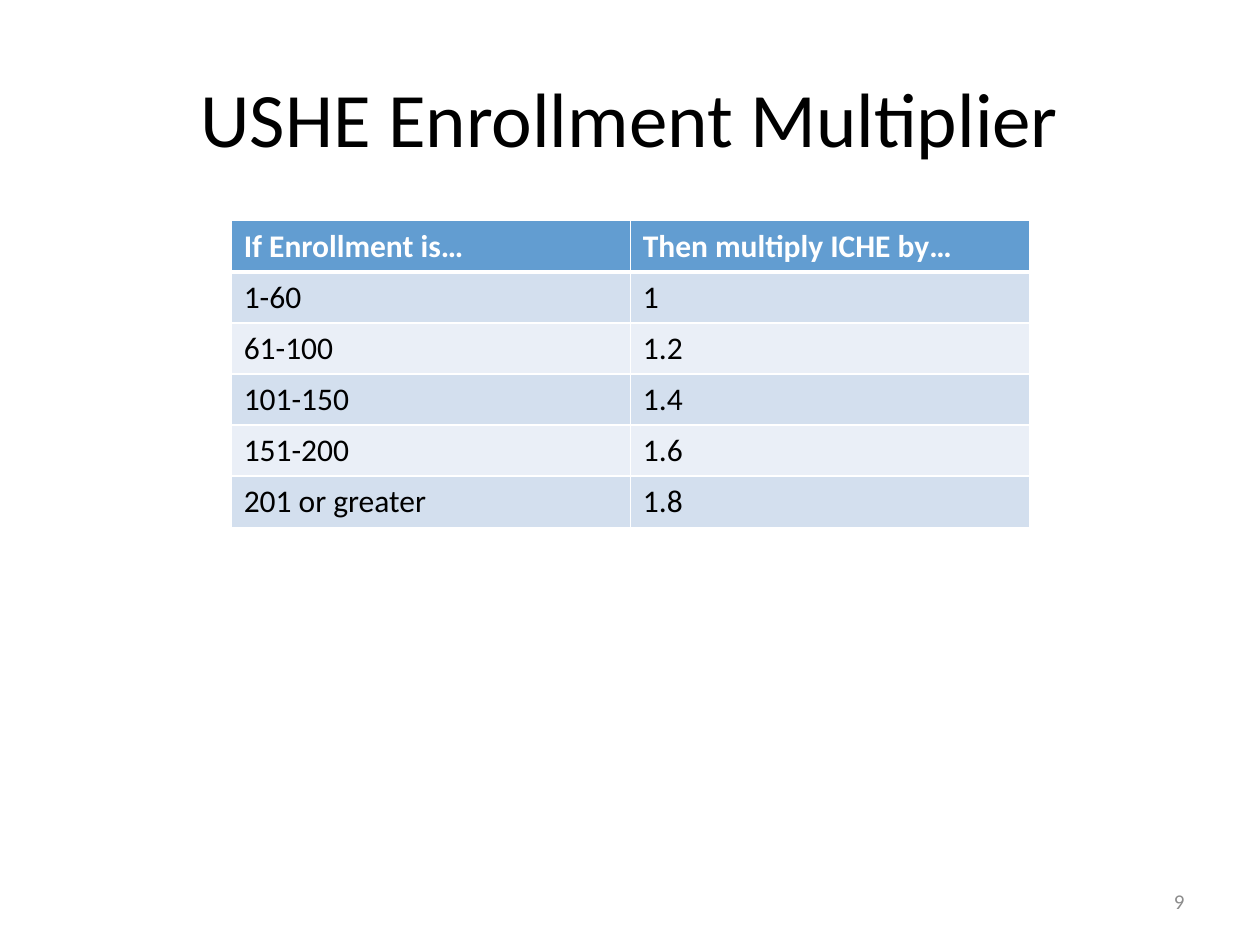
"""Build the enrollment multiplier slide with its lookup table."""
from typing import NamedTuple

from lxml.etree import SubElement
from pptx import Presentation
from pptx.dml.color import RGBColor as Rgb
from pptx.enum.text import MSO_ANCHOR as Anchor, PP_ALIGN as Align
from pptx.oxml.ns import qn
from pptx.util import Cm, Pt

FONT = "Calibri"
COLORS = {
    "text": "000000",
    "white": "FFFFFF",
    "header": "629DD1",
    "odd": "D3DFEE",
    "even": "EAEFF7",
    "number": "8C8C8C",
}


class Row(NamedTuple):
    enrollment: str
    multiplier: str


HEADER = Row("If Enrollment is…", "Then multiply ICHE by…")
ROWS = [
    Row("1-60", "1"),
    Row("61-100", "1.2"),
    Row("101-150", "1.4"),
    Row("151-200", "1.6"),
    Row("201 or greater", "1.8"),
]


def write(frame, text: str, *, size: float, color: str = "text",
          bold: bool = False, align=Align.LEFT) -> None:
    para = frame.paragraphs[0]
    para.alignment = align
    span = para.add_run()
    span.text = text
    span.font.name = FONT
    span.font.size = Pt(size)
    span.font.bold = bold
    span.font.color.rgb = Rgb.from_string(COLORS[color])


def add_borders(cell, widths: dict[str, float]) -> None:
    properties = cell._tc.get_or_add_tcPr()
    for side, width in widths.items():
        line = SubElement(properties, qn(f"a:ln{side}"), w=str(Pt(width)))
        fill = SubElement(line, qn("a:solidFill"))
        SubElement(fill, qn("a:srgbClr"), val=COLORS["white"])


def add_multiplier_table(page) -> None:
    rows = [HEADER, *ROWS]
    table = page.shapes.add_table(
        len(rows), len(HEADER), Cm(4.66), Cm(4.45), Cm(16.09), Cm(6.18)
    ).table
    for index, row in enumerate(rows):
        is_header = index == 0
        band = "header" if is_header else "odd" if index % 2 else "even"
        widths = {"L": 1, "R": 1, "T": 3 if index == 1 else 1,
                  "B": 3 if is_header else 1}
        for column, text in enumerate(row):
            cell = table.cell(index, column)
            add_borders(cell, widths)
            cell.fill.solid()
            cell.fill.fore_color.rgb = Rgb.from_string(COLORS[band])
            write(cell.text_frame, text, size=18, bold=is_header,
                  color="white" if is_header else "text")


def add_title(page, text: str) -> None:
    title = page.shapes.title
    title.left, title.top = Cm(1.27), Cm(0.76)
    title.width, title.height = Cm(22.86), Cm(3.18)
    title.text_frame.vertical_anchor = Anchor.MIDDLE
    write(title.text_frame, text, size=44, align=Align.CENTER)


def add_page_number(page, text: str) -> None:
    box = page.shapes.add_textbox(Cm(18.21), Cm(17.65), Cm(5.92), Cm(1.02))
    box.text_frame.word_wrap = True
    box.text_frame.vertical_anchor = Anchor.MIDDLE
    write(box.text_frame, text, size=12, color="number", align=Align.RIGHT)


def main() -> None:
    deck = Presentation()
    deck.slide_width, deck.slide_height = Cm(25.4), Cm(19.05)
    page = deck.slides.add_slide(deck.slide_layouts[5])
    add_title(page, "USHE Enrollment Multiplier")
    add_multiplier_table(page)
    add_page_number(page, "9")
    deck.save("out.pptx")


if __name__ == "__main__":
    main()
